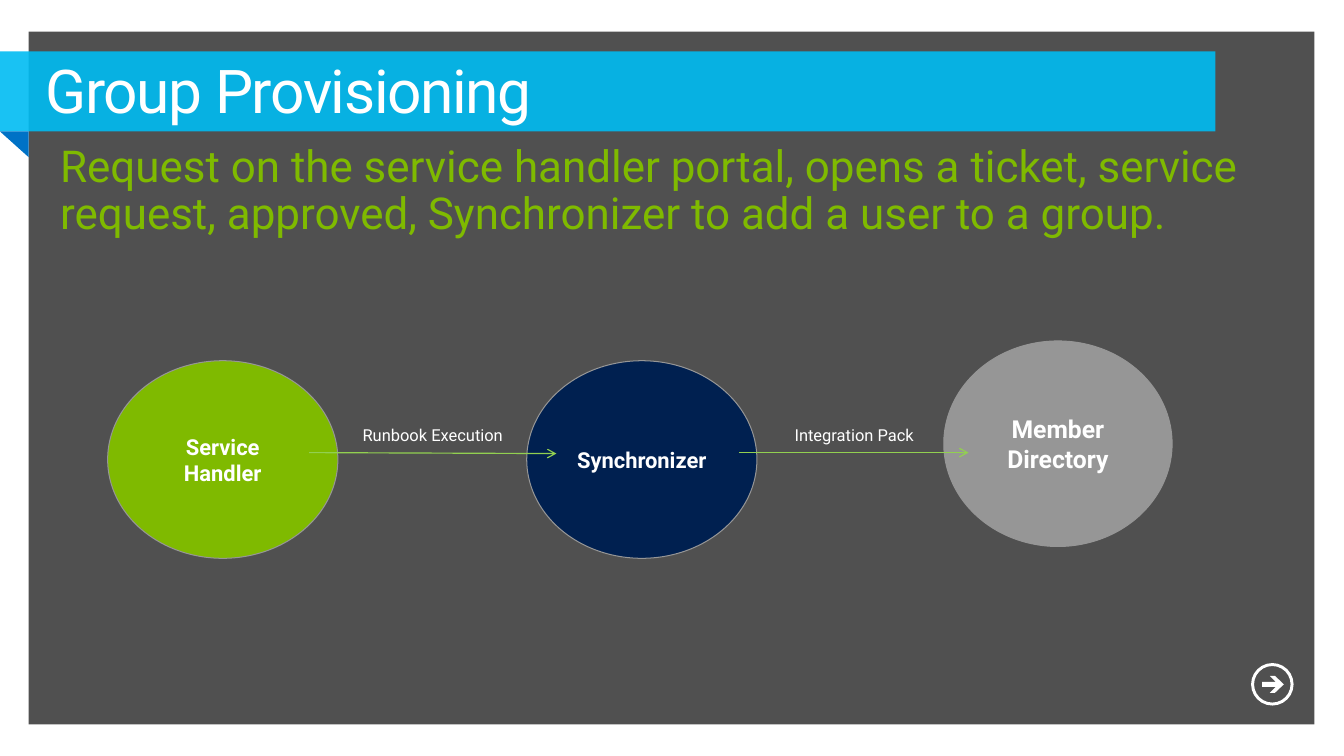
from lxml.etree import SubElement
from pptx import Presentation
from pptx.dml.color import RGBColor
from pptx.enum.shapes import MSO_CONNECTOR, MSO_SHAPE
from pptx.enum.text import MSO_ANCHOR, MSO_AUTO_SIZE, PP_ALIGN
from pptx.oxml.ns import qn
from pptx.util import Inches, Pt

# Content: places are left, top, width, height in percent of the slide
TITLE = ("Group Provisioning", (2.21, 6.8, 49.34, 10.59))
INTRO = ("Request on the service handler portal, opens a ticket, service request, "
         "approved, Synchronizer to add a user to a group.", (3.75, 18.43, 91.32, 44.84))
SYSTEMS = [
    ("Service Handler", "green", 16, (8.01, 47.71, 17.13, 26.14)),
    ("Synchronizer", "navy", 16, (39.19, 47.71, 17.13, 26.14)),
    ("Member Directory", "gray", 18, (70.22, 45.1, 16.99, 27.19)),
]
STEPS = [  # label, label place, arrow start, arrow end
    ("Runbook Execution", (26.25, 55.56, 11.91, 3.92), (23.01, 59.87), (41.4, 60)),
    ("Integration Pack", (58.16, 55.56, 10.81, 3.92), (55, 59.87), (72.06, 59.87)),
]
BORDER_BARS = [
    (1.91, 95.82, 96.99, 1.44),
    (1.47, 2.75, 96.99, 1.44),
    (97.79, 2.75, 0.66, 94.51),
]
RIBBON = (0, 6.8, 90.44, 10.59)
FOLD = (0, 17.39, 2.13, 3.4)
NEXT_RING = (93.09, 87.71, 3.16, 5.62)
NEXT_ARROW = [  # shares of the ring's box
    (0.58, 0.44), (0.44, 0.3), (0.56, 0.3), (0.77, 0.5), (0.56, 0.7),
    (0.44, 0.7), (0.58, 0.56), (0.26, 0.56), (0.26, 0.44),
]

COLORS = {
    "background": "505050", "white": "FFFFFF", "ribbon": "00BCF2", "fold": "0072C6",
    "green": "7FBA00", "navy": "002050", "gray": "969696", "arrow": "92D050",
}
WIDTH, HEIGHT = Inches(13.6), Inches(7.65)


def color(name):
    return RGBColor.from_string(COLORS[name])


def place(*percents):
    """Turn alternating horizontal and vertical percents into lengths."""
    return [round(share * (HEIGHT if index % 2 else WIDTH) / 100)
            for index, share in enumerate(percents)]


def set_all(target, **values):
    for name, value in values.items():
        setattr(target, name, value)


def paint(shape, fill, line=None):
    shape.shadow.inherit = False
    shape.fill.solid()
    shape.fill.fore_color.rgb = color(fill)
    if line:
        shape.line.color.rgb = color(line)
        shape.line.width = Pt(0.75)
    else:
        shape.line.fill.background()


def add_shape(kind, box, fill, line=None):
    shape = slide.shapes.add_shape(kind, *place(*box))
    paint(shape, fill, line)
    return shape


def write(shape, text, size, ink="white", bold=False, align=PP_ALIGN.LEFT,
          spacing=None, **frame_format):
    frame = shape.text_frame
    set_all(frame, **{"word_wrap": True, "auto_size": MSO_AUTO_SIZE.NONE, **frame_format})
    paragraph = frame.paragraphs[0]
    set_all(paragraph, alignment=align, line_spacing=spacing)
    run = paragraph.add_run()
    run.text = text
    set_all(run.font, name="Roboto", size=Pt(size), bold=bold)
    run.font.color.rgb = color(ink)


presentation = Presentation()
set_all(presentation, slide_width=WIDTH, slide_height=HEIGHT)
slide = presentation.slides.add_slide(presentation.slide_layouts[5])
slide.background.fill.solid()
slide.background.fill.fore_color.rgb = color("background")

# White border
border = add_shape(MSO_SHAPE.FRAME, (0, 0, 100, 100), "white")
border.adjustments[0] = 0.038
for bar in BORDER_BARS:
    add_shape(MSO_SHAPE.RECTANGLE, bar, "white")

# Translucent ribbon with its folded end
ribbon = add_shape(MSO_SHAPE.RECTANGLE, RIBBON, "ribbon")
ribbon_color = next(ribbon.element.iter(qn("a:srgbClr")))
SubElement(ribbon_color, qn("a:alpha"), val="90000")
fold = add_shape(MSO_SHAPE.RIGHT_TRIANGLE, FOLD, "fold")
fold.rotation = 180

# Next-page sign
ring = add_shape(MSO_SHAPE.DONUT, NEXT_RING, "white")
ring.adjustments[0] = 0.07
points = [(round(ring.left + x * ring.width), round(ring.top + y * ring.height))
          for x, y in NEXT_ARROW]
builder = slide.shapes.build_freeform(*points[0])
builder.add_line_segments(points[1:], close=True)
paint(builder.convert_to_shape(), "white")

# Title, brought in front of the ribbon
title = slide.shapes.title
title.element.getparent().append(title.element)
title_text, title_box = TITLE
set_all(title, **dict(zip(("left", "top", "width", "height"), place(*title_box))))
write(title, title_text, 44, spacing=0.9, vertical_anchor=MSO_ANCHOR.TOP,
      margin_left=Inches(0.16), margin_right=Inches(0.16),
      margin_top=Inches(0.1), margin_bottom=Inches(0.1))
next(title.element.iter(qn("a:rPr"))).set("spc", "-100")

# Systems
for name, fill, size, box in SYSTEMS:
    circle = add_shape(MSO_SHAPE.OVAL, box, fill, "gray")
    write(circle, name, size, bold=True, align=PP_ALIGN.CENTER,
          vertical_anchor=MSO_ANCHOR.MIDDLE)

# Arrows and their labels
for label, box, start, end in STEPS:
    arrow = slide.shapes.add_connector(MSO_CONNECTOR.STRAIGHT, *place(*start, *end))
    arrow.line.color.rgb = color("arrow")
    arrow.line.width = Pt(0.85)
    SubElement(next(arrow.element.iter(qn("a:ln"))), qn("a:tailEnd"), type="arrow")
    SubElement(arrow.element.spPr, qn("a:effectLst"))
    write(slide.shapes.add_textbox(*place(*box)), label, 12,
          align=PP_ALIGN.CENTER, word_wrap=False)

# Introduction
intro_text, intro_box = INTRO
write(slide.shapes.add_textbox(*place(*intro_box)), intro_text, 32, "green", spacing=0.9)

presentation.save("out.pptx")
